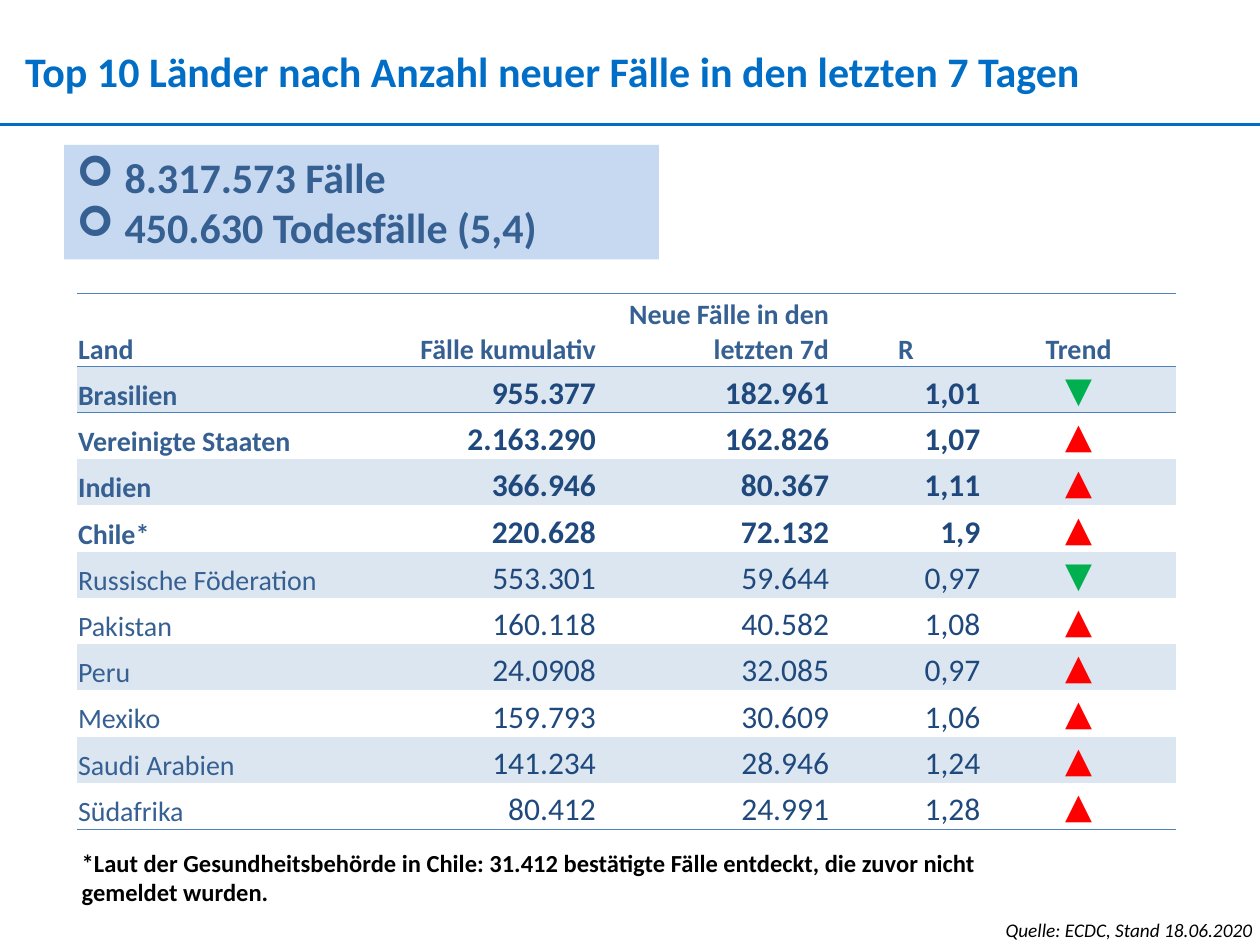
from lxml import etree
from pptx import Presentation
from pptx.dml.color import RGBColor
from pptx.enum.shapes import MSO_CONNECTOR, MSO_SHAPE
from pptx.enum.text import MSO_ANCHOR, PP_ALIGN
from pptx.oxml.ns import qn
from pptx.util import Inches, Pt

WIDTH, HEIGHT = 10, 7.5
FONT = "Calibri"
TITLE_BLUE, TEXT_BLUE, NUMBER_BLUE = "006EC7", "366092", "1F497D"
BOX_BLUE, BAND_BLUE, RULE_BLUE = "C6D9F1", "DCE6F1", "4F81BD"
TREND_COLORS = {"▲": "FF0000", "▼": "00B050"}
NO_STYLE_NO_GRID = "{2D5ABB26-0587-4C30-8999-92F81FD0307C}"

COLUMN_WIDTHS = [2.58, 1.55, 1.85, 1.2, 1.54]
HEADER_HEIGHT, ROW_HEIGHT = 0.58, 0.367
HEADERS = ["Land", "Fälle kumulativ", "Neue Fälle in den letzten 7d", "R", "Trend"]
HEADER_ALIGNMENTS = [PP_ALIGN.LEFT, PP_ALIGN.RIGHT, PP_ALIGN.RIGHT, PP_ALIGN.CENTER, PP_ALIGN.CENTER]
BODY_ALIGNMENTS = [PP_ALIGN.LEFT] + [PP_ALIGN.RIGHT] * 3 + [PP_ALIGN.CENTER]
BOLD_ROWS = 4
COUNTRIES = [
    ("Brasilien", "955.377", "182.961", "1,01", "▼"),
    ("Vereinigte Staaten", "2.163.290", "162.826", "1,07", "▲"),
    ("Indien", "366.946", "80.367", "1,11", "▲"),
    ("Chile*", "220.628", "72.132", "1,9", "▲"),
    ("Russische Föderation", "553.301", "59.644", "0,97", "▼"),
    ("Pakistan", "160.118", "40.582", "1,08", "▲"),
    ("Peru", "24.0908", "32.085", "0,97", "▲"),
    ("Mexiko", "159.793", "30.609", "1,06", "▲"),
    ("Saudi Arabien", "141.234", "28.946", "1,24", "▲"),
    ("Südafrika", "80.412", "24.991", "1,28", "▲"),
]


def color(hex_string):
    return RGBColor.from_string(hex_string)


def write(paragraph, text, size, hex_color, alignment=PP_ALIGN.LEFT, **styles):
    paragraph.text = text
    paragraph.alignment = alignment
    formats = {"name": FONT, "size": Pt(size), "bold": False, **styles}
    for name, value in formats.items():
        setattr(paragraph.font, name, value)
    paragraph.font.color.rgb = color(hex_color)


def set_margins(target, left, top, right, bottom):
    margins = {"left": left, "top": top, "right": right, "bottom": bottom}
    for side, value in margins.items():
        setattr(target, f"margin_{side}", Inches(value))


def add_title(slide, text):
    title = slide.shapes.title
    position = {"left": 0.2, "top": 0.36, "width": 9.63, "height": 0.4}
    for name, value in position.items():
        setattr(title, name, Inches(value))
    frame = title.text_frame
    set_margins(frame, 0, 0, 0, 0)
    frame.vertical_anchor = MSO_ANCHOR.TOP
    write(frame.paragraphs[0], text, 24, TITLE_BLUE, bold=True)


def add_title_rule(slide, top):
    rule = slide.shapes.add_connector(
        MSO_CONNECTOR.STRAIGHT, 0, Inches(top), Inches(WIDTH), Inches(top))
    rule.line.color.rgb = color(TITLE_BLUE)
    rule.line.width = Pt(1.5)
    etree.SubElement(rule._element.spPr, qn("a:effectLst"))


def add_bullet(paragraph, character, indent):
    properties = paragraph._p.get_or_add_pPr()
    properties.set("marL", str(Inches(indent)))
    properties.set("indent", str(-Inches(indent)))
    etree.SubElement(properties, qn("a:buFont"), typeface="Wingdings")
    etree.SubElement(properties, qn("a:buChar"), char=character)


def add_key_figures(slide, lines):
    box = slide.shapes.add_shape(
        MSO_SHAPE.RECTANGLE, Inches(0.51), Inches(1.15), Inches(4.72), Inches(0.91))
    box.shadow.inherit = False
    box.fill.solid()
    box.fill.fore_color.rgb = color(BOX_BLUE)
    box.line.fill.background()
    frame = box.text_frame
    frame.vertical_anchor = MSO_ANCHOR.TOP
    for index, text in enumerate(lines):
        paragraph = frame.add_paragraph() if index else frame.paragraphs[0]
        add_bullet(paragraph, "➢", 0.38)
        write(paragraph, text, 24, TEXT_BLUE, bold=True)


def add_note(slide, left, top, width, height, text, size, **styles):
    box = slide.shapes.add_textbox(Inches(left), Inches(top), Inches(width), Inches(height))
    box.text_frame.word_wrap = True
    write(box.text_frame.paragraphs[0], text, size, "000000", **styles)


def add_border(cell, side):
    """Draw a thin rule on one side of a cell: "T" or "B"."""
    properties = cell._tc.get_or_add_tcPr()
    line = etree.Element(qn(f"a:ln{side}"), w=str(Pt(0.5)))
    fill = etree.SubElement(line, qn("a:solidFill"))
    etree.SubElement(fill, qn("a:srgbClr"), val=RULE_BLUE)
    borders = [child for child in properties if child.tag in (qn("a:lnT"), qn("a:lnB"))]
    properties.insert(len(borders), line)


def fill_cell(cell, text, size, hex_color, alignment, bold, banded, anchor=MSO_ANCHOR.BOTTOM):
    set_margins(cell, 0.01, 0.01, 0.01, 0)
    cell.vertical_anchor = anchor
    if banded:
        cell.fill.solid()
        cell.fill.fore_color.rgb = color(BAND_BLUE)
    else:
        cell.fill.background()
    write(cell.text_frame.paragraphs[0], text, size, hex_color, alignment, bold=bold)


def add_country_table(slide):
    row_heights = [HEADER_HEIGHT] + [ROW_HEIGHT] * len(COUNTRIES)
    frame = slide.shapes.add_table(
        len(row_heights), len(COLUMN_WIDTHS), Inches(0.61), Inches(2.33),
        Inches(sum(COLUMN_WIDTHS)), Inches(sum(row_heights)))
    table = frame.table
    table.first_row = table.horz_banding = False
    table._tbl.tblPr.find(qn("a:tableStyleId")).text = NO_STYLE_NO_GRID
    for column, width in zip(table.columns, COLUMN_WIDTHS):
        column.width = Inches(width)
    for row, height in zip(table.rows, row_heights):
        row.height = Inches(height)

    for column, (text, alignment) in enumerate(zip(HEADERS, HEADER_ALIGNMENTS)):
        fill_cell(table.cell(0, column), text, 16, TEXT_BLUE, alignment, True, False)
    for row, country in enumerate(COUNTRIES, start=1):
        bold, banded = row <= BOLD_ROWS, row % 2 == 1
        for column, (text, alignment) in enumerate(zip(country, BODY_ALIGNMENTS)):
            cell = table.cell(row, column)
            if text in TREND_COLORS:
                fill_cell(cell, text, 20, TREND_COLORS[text], alignment, False, banded,
                          MSO_ANCHOR.MIDDLE)
            else:
                size, text_color = (18, NUMBER_BLUE) if column else (16, TEXT_BLUE)
                fill_cell(cell, text, size, text_color, alignment, bold, banded)

    for column in range(len(COLUMN_WIDTHS)):
        for row, side in [(0, "T"), (0, "B"), (1, "T"), (len(COUNTRIES), "B")]:
            add_border(table.cell(row, column), side)


def main():
    presentation = Presentation()
    presentation.slide_width, presentation.slide_height = Inches(WIDTH), Inches(HEIGHT)
    slide = presentation.slides.add_slide(presentation.slide_layouts[5])
    add_country_table(slide)
    add_title(slide, "Top 10 Länder nach Anzahl neuer Fälle in den letzten 7 Tagen")
    add_title_rule(slide, 0.99)
    add_key_figures(slide, ["8.317.573 Fälle", "450.630 Todesfälle (5,4)"])
    add_note(slide, 6.5, 7.24, 3.54, 0.29, "Quelle: ECDC, Stand 18.06.2020", 11,
             alignment=PP_ALIGN.RIGHT, italic=True)
    add_note(slide, 0.55, 6.68, 7.52, 0.57,
             "*Laut der Gesundheitsbehörde in Chile: 31.412 bestätigte Fälle entdeckt, "
             "die zuvor nicht gemeldet wurden.", 14, bold=True)
    presentation.save("out.pptx")


if __name__ == "__main__":
    main()
